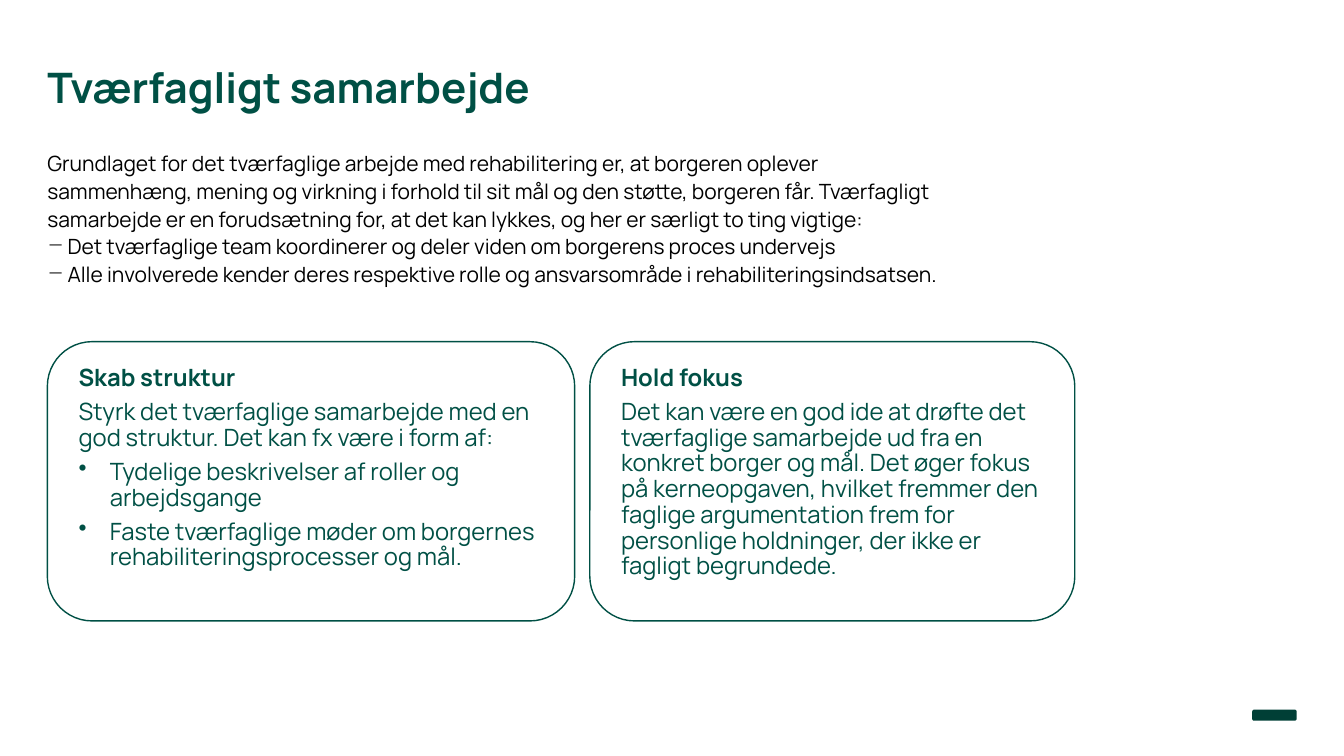
from pptx import Presentation
from pptx.dml.color import RGBColor
from pptx.enum.shapes import MSO_SHAPE
from pptx.enum.text import MSO_ANCHOR, MSO_AUTO_SIZE, PP_ALIGN
from pptx.oxml.ns import qn
from pptx.util import Inches, Pt
from lxml import etree

GREEN = RGBColor(0x00, 0x50, 0x45)
DARK_GREEN = RGBColor(0x00, 0x3F, 0x36)
BLACK = RGBColor(0, 0, 0)
FONT = "Manrope"
TOP = MSO_ANCHOR.TOP
NO_FIT = MSO_AUTO_SIZE.NONE
LEFT = PP_ALIGN.LEFT
ROUNDED = MSO_SHAPE.ROUNDED_RECTANGLE


def set_frame(tf, side=0, top=0):
    tf.word_wrap = True
    tf.auto_size = NO_FIT
    tf.vertical_anchor = TOP
    tf.margin_left = tf.margin_right = Inches(side)
    tf.margin_top = tf.margin_bottom = Inches(top)


def add_text(tf, text, size, color, spacing, after=0, bold=False, bullet=None, indent=0):
    p = tf.paragraphs[0] if not tf.text else tf.add_paragraph()
    p.alignment = LEFT
    p.line_spacing = spacing
    p.space_before = Pt(0)
    p.space_after = Pt(after)
    if bullet:
        pPr = p._p.get_or_add_pPr()
        pPr.set("marL", str(Inches(indent)))
        pPr.set("indent", str(-Inches(indent)))
        etree.SubElement(pPr, qn("a:buChar")).set("char", bullet)
    r = p.add_run()
    r.text = text
    r.font.name = FONT
    r.font.size = Pt(size)
    r.font.bold = bold
    r.font.color.rgb = color


prs = Presentation()
prs.slide_width = Inches(13.33)
prs.slide_height = Inches(7.5)
s = prs.slides.add_slide(prs.slide_layouts[5])

title = s.shapes.title
title.left, title.top = Inches(0.47), Inches(0.69)
title.width, title.height = Inches(9.19), Inches(0.6)
set_frame(title.text_frame)
add_text(title.text_frame, "Tværfagligt samarbejde", 30, GREEN, 0.83, bold=True)

intro = s.shapes.add_textbox(Inches(0.47), Inches(1.47), Inches(9.1), Inches(1.52))
set_frame(intro.text_frame)
intro_lines = [
    ("Grundlaget for det tværfaglige arbejde med rehabilitering er, at borgeren oplever "
     "sammenhæng, mening og virkning i forhold til sit mål og den støtte, borgeren får. "
     "Tværfagligt samarbejde er en forudsætning for, at det kan lykkes, og her er særligt "
     "to ting vigtige:", None),
    ("Det tværfaglige team koordinerer og deler viden om borgerens proces undervejs", "−"),
    ("Alle involverede kender deres respektive rolle og ansvarsområde i "
     "rehabiliteringsindsatsen.", "−"),
]
for text, bullet in intro_lines:
    add_text(intro.text_frame, text, 15, BLACK, 1.1, bullet=bullet, indent=0.2)

cards = [
    (0.47, 5.23, "Skab struktur", [
        ("Styrk det tværfaglige samarbejde med en god struktur. Det kan fx være i form af:", None),
        ("Tydelige beskrivelser af roller og arbejdsgange", "•"),
        ("Faste tværfaglige møder om borgernes rehabiliteringsprocesser og mål.", "•"),
    ]),
    (5.85, 4.81, "Hold fokus", [
        ("Det kan være en god ide at drøfte det tværfaglige samarbejde ud fra en konkret "
         "borger og mål. Det øger fokus på kerneopgaven, hvilket fremmer den faglige "
         "argumentation frem for personlige holdninger, der ikke er fagligt begrundede.", None),
    ]),
]
for left, width, heading, lines in cards:
    card = s.shapes.add_shape(ROUNDED, Inches(left), Inches(3.39), Inches(width), Inches(2.77))
    card.adjustments[0] = 0.16
    card.shadow.inherit = False
    card.fill.background()
    card.line.color.rgb = GREEN
    card.line.width = Pt(1)
    tf = card.text_frame
    set_frame(tf, 0.18, 0.11)
    add_text(tf, heading, 17, GREEN, 0.9, after=6, bold=True)
    for text, bullet in lines:
        add_text(tf, text, 17, GREEN, 0.9, after=6, bullet=bullet, indent=0.31)

mark = s.shapes.add_shape(ROUNDED, Inches(12.42), Inches(7.04), Inches(0.44), Inches(0.11))
mark.shadow.inherit = False
mark.fill.solid()
mark.fill.fore_color.rgb = DARK_GREEN
mark.line.fill.background()

prs.save("out.pptx")
